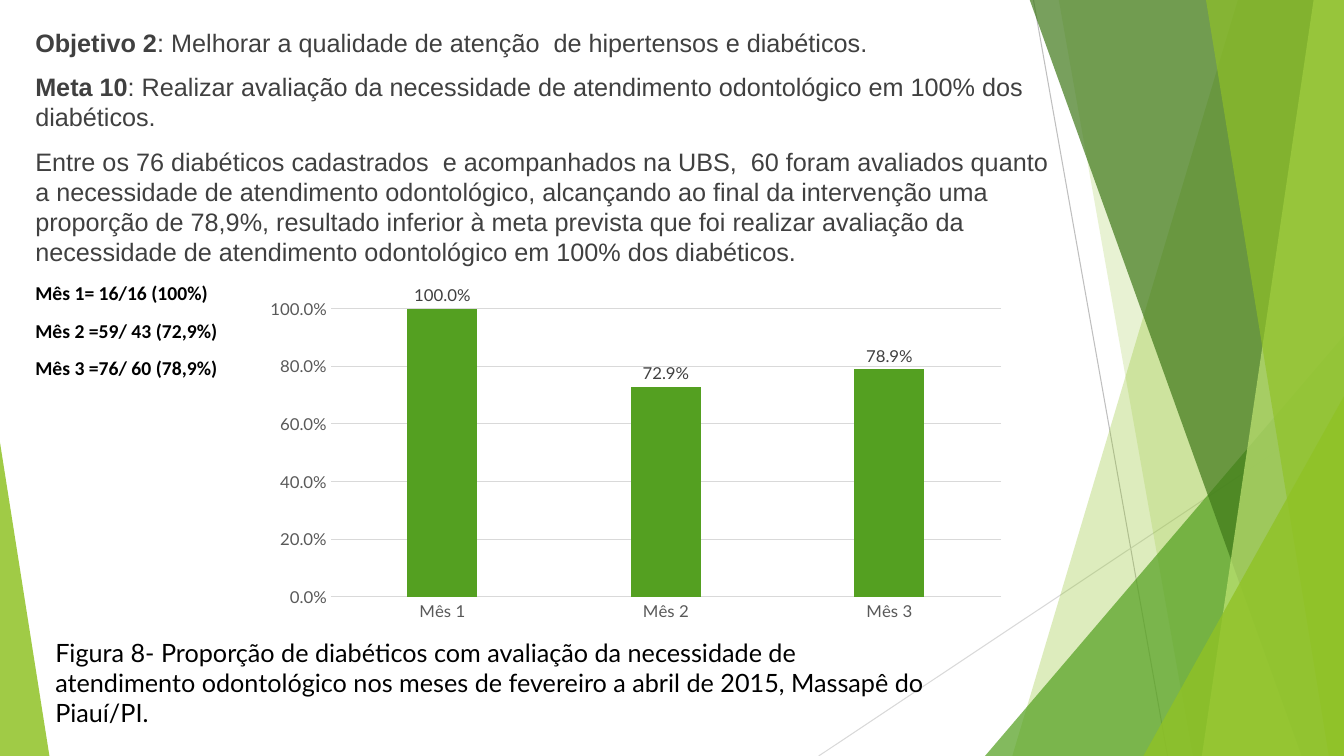
from pptx import Presentation
from pptx.chart.data import CategoryChartData
from pptx.dml.color import RGBColor
from pptx.enum.chart import XL_CHART_TYPE, XL_LABEL_POSITION, XL_TICK_MARK
from pptx.enum.shapes import MSO_CONNECTOR, MSO_SHAPE
from pptx.enum.text import MSO_ANCHOR, MSO_AUTO_SIZE
from pptx.oxml.ns import qn
from pptx.util import Inches, Pt
from lxml.etree import SubElement

WIDE, HIGH, TOP = 13.33, 7.5, -0.01


def hue(code):
    return RGBColor.from_string(code)


def put(item, **style):
    for name, value in style.items():
        setattr(item, name, value)


class Page:
    main = {"name": "Arial", "size": Pt(18), "bold": False}
    month = {"name": "Calibri", "size": Pt(14), "bold": True}
    plain = {"name": "Lato", "size": Pt(18)}
    small = {"name": "Lato", "size": Pt(12)}

    def __init__(self, deck):
        self.slide = deck.slides.add_slide(deck.slide_layouts[1])
        self.shapes = self.slide.shapes
        title = self.shapes.title._element
        title.getparent().remove(title)

    def font(self, font, style, color):
        put(font, **style)
        font.color.rgb = hue(color)

    def stroke(self, line, color):
        line.color.rgb = hue(color)
        line.width = Pt(0.75)

    def line(self, start, end, color):
        link = self.shapes.add_connector(
            MSO_CONNECTOR.STRAIGHT, *map(Inches, start + end))
        self.stroke(link.line, color)
        SubElement(link._element.spPr, qn("a:effectLst"))

    def paint(self, shape, color, alpha):
        shape.shadow.inherit = False
        shape.line.fill.background()
        shape.fill.solid()
        shape.fill.fore_color.rgb = hue(color)
        tint = shape._element.spPr.find(qn("a:solidFill"))[0]
        SubElement(tint, qn("a:alpha"), val=str(alpha * 1000))

    def band(self, top, base, color, alpha):
        form = self.shapes.build_freeform(Inches(top), Inches(TOP))
        spots = [(WIDE, TOP), (WIDE, HIGH), (base, HIGH)]
        form.add_line_segments([(Inches(x), Inches(y)) for x, y in spots])
        self.paint(form.convert_to_shape(), color, alpha)

    def wedge(self, box, tip, color, alpha):
        shape = self.shapes.add_shape(
            MSO_SHAPE.ISOSCELES_TRIANGLE, *map(Inches, box))
        shape.adjustments[0] = tip
        self.paint(shape, color, alpha)

    def words(self, para, text, style, color):
        run = para.add_run()
        run.text = text
        self.font(run.font, style, color)

    def body(self, box, rows):
        hold = self.slide.placeholders[1]
        self.shapes._spTree.append(hold._element)
        put(hold, **dict(zip(("left", "top", "width", "height"),
                             map(Inches, box))))
        frame = hold.text_frame
        put(frame, word_wrap=True, auto_size=MSO_AUTO_SIZE.NONE,
            vertical_anchor=MSO_ANCHOR.TOP)
        for spot, (lead, text, style, color) in enumerate(rows):
            para = frame.add_paragraph() if spot else frame.paragraphs[0]
            put(para, space_before=Pt(10), space_after=Pt(0))
            props = para._p.get_or_add_pPr()
            props.set("marL", "0")
            props.set("indent", "0")
            SubElement(props, qn("a:buNone"))
            if lead:
                self.words(para, lead, {**style, "bold": True}, color)
            self.words(para, text, style, color)

    def note(self, box, text):
        frame = self.shapes.add_textbox(*map(Inches, box)).text_frame
        put(frame, word_wrap=True, auto_size=MSO_AUTO_SIZE.SHAPE_TO_FIT_TEXT)
        self.words(frame.paragraphs[0], text, self.plain, "000000")

    def chart(self, box, cats, name, vals):
        data = CategoryChartData(number_format="0.0%")
        data.categories = cats
        data.add_series(name, vals)
        chart = self.shapes.add_chart(
            XL_CHART_TYPE.COLUMN_CLUSTERED, *map(Inches, box), data).chart
        put(chart, has_legend=False, has_title=False)
        self.font(chart.font, {**self.small, "size": Pt(10)}, "000000")
        for axis in (chart.category_axis, chart.value_axis):
            put(axis, major_tick_mark=XL_TICK_MARK.NONE,
                minor_tick_mark=XL_TICK_MARK.NONE)
            self.font(axis.tick_labels.font, self.small, "595959")
        self.stroke(chart.category_axis.format.line, "D9D9D9")
        scale = chart.value_axis
        put(scale, minimum_scale=0, maximum_scale=1, major_unit=0.2,
            has_major_gridlines=True)
        put(scale.tick_labels, number_format="0.0%",
            number_format_is_linked=False)
        scale.format.line.fill.background()
        self.stroke(scale.major_gridlines.format.line, "D9D9D9")
        plot = chart.plots[0]
        put(plot, gap_width=219, overlap=-27, vary_by_categories=False,
            has_data_labels=True)
        fill = plot.series[0].format.fill
        fill.solid()
        fill.fore_color.rgb = hue("54A021")
        put(plot.data_labels, show_value=True, number_format="0.0%",
            number_format_is_linked=False,
            position=XL_LABEL_POSITION.OUTSIDE_END)
        self.font(plot.data_labels.font, self.small, "404040")


def main():
    deck = Presentation()
    put(deck, slide_width=Inches(WIDE), slide_height=Inches(HIGH))
    page = Page(deck)

    page.line((10.25, 0), (11.58, HIGH), "BFBFBF")
    page.line((WIDE, 4.03), (8.12, HIGH), "D9D9D9")
    page.band(12.28, 10.04, "90C226", 30)
    page.band(10.5, 11.83, "90C226", 20)
    page.wedge((9.77, 3.33, 3.56, 4.17), 1, "54A021", 72)
    page.band(10.21, 12.91, "3F7819", 70)
    page.band(13.03, 11.92, "C0E474", 70)
    page.band(11.96, 13.18, "90C226", 65)
    page.wedge((11.34, 3.93, 1.99, 3.57), 1, "90C226", 80)
    page.wedge((0, 4.39, 0.49, 3.11), 0, "90C226", 85)

    goals = [
        ("Objetivo 2", ": Melhorar a qualidade de atenção  de hipertensos "
         "e diabéticos."),
        ("Meta 10", ": Realizar avaliação da necessidade de atendimento "
         "odontológico em 100% dos diabéticos."),
        ("", "Entre os 76 diabéticos cadastrados  e acompanhados na UBS,  "
         "60 foram avaliados quanto a necessidade de atendimento "
         "odontológico, alcançando ao final da intervenção uma proporção "
         "de 78,9%, resultado inferior à meta prevista que foi realizar "
         "avaliação da necessidade de atendimento odontológico em 100% "
         "dos diabéticos."),
    ]
    months = ["Mês 1= 16/16 (100%)", "Mês 2 =59/ 43 (72,9%)",
              "Mês 3 =76/ 60 (78,9%)"]
    rows = [(lead, text, page.main, "404040") for lead, text in goals]
    rows += [("", text, page.month, "000000") for text in months]
    page.body((0.25, 0.22, 10.35, 6.43), rows)

    page.chart((2.53, 2.83, 7.55, 3.39), ["Mês 1", "Mês 2", "Mês 3"],
               "Series 1", [1, 0.729, 0.789])
    page.note((0.45, 6.27, 8.91, 1.01),
              "Figura 8- Proporção de diabéticos com avaliação da "
              "necessidade de atendimento odontológico nos meses de "
              "fevereiro a abril de 2015, Massapê do Piauí/PI.")
    deck.save("out.pptx")


if __name__ == "__main__":
    main()
